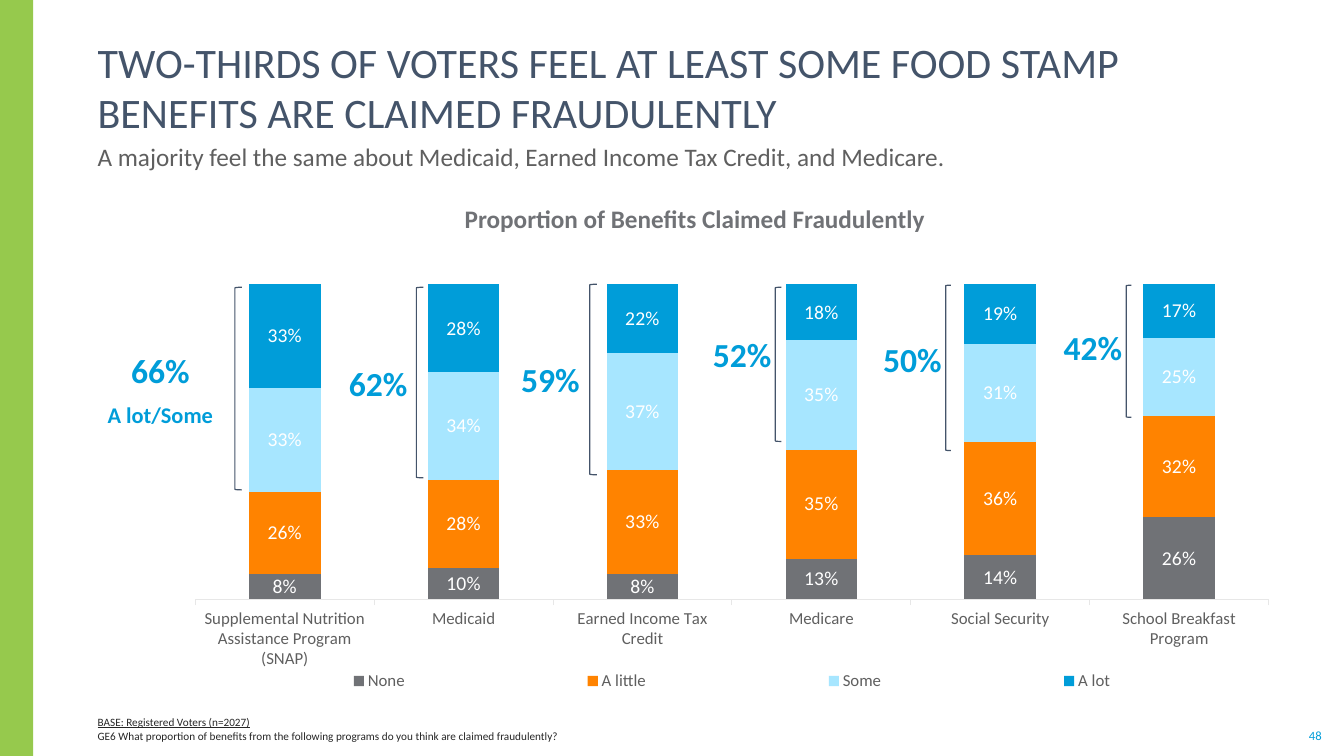
from pptx import Presentation
from pptx.chart.data import CategoryChartData
from pptx.dml.color import RGBColor
from pptx.enum import chart as ch, shapes, text
from pptx.oxml import parse_xml
from pptx.oxml.ns import nsdecls
from pptx.util import Inches, Pt

# Content
BLUE, NAVY, GRAY, SLATE = "009DD9", "44546A", "5F5F5F", "707276"
TITLE = ("TWO-THIRDS OF VOTERS FEEL AT LEAST SOME FOOD STAMP "
         "BENEFITS ARE CLAIMED FRAUDULENTLY")
LEAD = "A majority feel the same about Medicaid, Earned Income Tax Credit, and Medicare."
HEAD = "Proportion of Benefits Claimed Fraudulently"
BASE = "BASE: Registered Voters (n=2027)"
ASK = ("GE6 What proportion of benefits from the following programs "
       "do you think are claimed fraudulently?")
CATS = ["Supplemental Nutrition Assistance Program (SNAP)", "Medicaid",
        "Earned Income Tax Credit", "Medicare", "Social Security",
        "School Breakfast Program"]
SERIES = [
    ("None", SLATE, (0.08, 0.10, 0.08, 0.13, 0.14, 0.26)),
    ("A little", "FF8300", (0.26, 0.28, 0.33, 0.35, 0.36, 0.32)),
    ("Some", "A7E6FF", (0.33, 0.34, 0.37, 0.35, 0.31, 0.25)),
    ("A lot", BLUE, (0.33, 0.28, 0.22, 0.18, 0.19, 0.17)),
]
# Bracket left, top, width, height; label, its centre x and y
SUMS = [
    (2.33, 2.85, 0.07, 2.01, "66%", 1.59, 3.86),
    (4.13, 2.85, 0.07, 1.89, "62%", 3.75, 3.80),
    (5.85, 2.82, 0.07, 1.89, "59%", 5.46, 3.76),
    (7.69, 2.85, 0.06, 1.53, "52%", 7.36, 3.51),
    (9.38, 2.83, 0.05, 1.64, "50%", 9.05, 3.56),
    (11.17, 2.83, 0.05, 1.31, "42%", 10.84, 3.44),
]

deck = Presentation()
deck.slide_width, deck.slide_height = Inches(13.33), Inches(7.5)
slide = deck.slides.add_slide(deck.slide_layouts[6])


def rgb(code):
    return RGBColor.from_string(code)


def style(font, size, color, **more):
    for key, val in dict(name="Calibri", size=Pt(size), **more).items():
        setattr(font, key, val)
    font.color.rgb = rgb(color)


def write(at, rows, side=0.1, mid="TOP", align="LEFT", wrap=True, gap=0):
    """Each row is text, size, colour and a dict of font values."""
    frame = slide.shapes.add_textbox(*map(Inches, at)).text_frame
    form = dict(word_wrap=wrap, margin_left=Inches(side), margin_right=Inches(side),
                margin_top=0, margin_bottom=0,
                vertical_anchor=getattr(text.MSO_ANCHOR, mid))
    for key, val in form.items():
        setattr(frame, key, val)
    for i, (words, size, color, more) in enumerate(rows):
        para = frame.add_paragraph() if i else frame.paragraphs[0]
        para.alignment = getattr(text.PP_ALIGN, align)
        if i:
            para.space_before = Pt(gap)
        run = para.add_run()
        run.text = words
        style(run.font, size, color, **more)


def shape(kind, at):
    item = slide.shapes.add_shape(kind, *map(Inches, at))
    item.shadow.inherit = False
    return item


def place(node, x, y, w, h, inner=False):
    """Set a fixed layout, in fractions of the chart."""
    target = '<c:layoutTarget val="inner"/>' if inner else ""
    parts = "".join(f'<c:{k}Mode val="edge"/>' for k in "xy")
    parts += "".join(f'<c:{k} val="{v}"/>' for k, v in zip("xywh", (x, y, w, h)))
    for old in node.findall("{*}layout"):
        node.remove(old)
    new = parse_xml(f'<c:layout {nsdecls("c")}><c:manualLayout>{target}{parts}'
                    '</c:manualLayout></c:layout>')
    pos = node.find("{*}legendPos")
    if pos is None:
        node.insert(0, new)
    else:
        pos.addnext(new)


# Side bar
bar = shape(shapes.MSO_SHAPE.RECTANGLE, (0, 0, 0.33, 7.5))
bar.fill.solid()
bar.fill.fore_color.rgb = rgb("96C94D")
bar.line.fill.background()

# Chart
data = CategoryChartData(number_format="0%")
data.categories = CATS
for name, _, vals in SERIES:
    data.add_series(name, vals)
box = map(Inches, (1.75, 2.7, 11.02, 4.27))
chart = slide.shapes.add_chart(ch.XL_CHART_TYPE.COLUMN_STACKED_100, *box, data).chart
style(chart.font, 10, GRAY)
chart.has_title = False
chart.has_legend = True
chart.legend.position = ch.XL_LEGEND_POSITION.BOTTOM
chart.legend.include_in_layout = False
style(chart.legend.font, 12, GRAY)
plot = chart.plots[0]
plot.gap_width, plot.overlap, plot.vary_by_categories = 150, 100, False
for series, (_, color, _) in zip(plot.series, SERIES):
    series.format.fill.solid()
    series.format.fill.fore_color.rgb = rgb(color)
    tags = series.data_labels
    form = dict(show_value=True, number_format="0%", number_format_is_linked=False,
                position=ch.XL_LABEL_POSITION.CENTER)
    for key, val in form.items():
        setattr(tags, key, val)
    style(tags.font, 14, "FFFFFF")

# Axes and layout
cat, val = chart.category_axis, chart.value_axis
cat.major_tick_mark = ch.XL_TICK_MARK.OUTSIDE
cat.format.line.color.rgb = rgb("E7E7E7")
cat.format.line.width = Pt(0.75)
style(cat.tick_labels.font, 12, GRAY)
val.visible = val.has_major_gridlines = False
val.minimum_scale, val.maximum_scale = 0, 1
place(plot._element.getparent(), 0.017, 0.028, 0.966, 0.732, True)
place(chart.legend._element, 0, 0.91, 1, 0.08)

# Headings, footnote and page number
write((0.87, 0.34, 11.91, 1.02), [(TITLE, 30, NAVY, {})], mid="BOTTOM")
write((0.87, 1.4, 11.9, 0.34), [(LEAD, 18, GRAY, {})])
write((4.51, 1.97, 4.81, 0.4), [(HEAD, 18, SLATE, {"bold": True})],
      mid="MIDDLE", wrap=False)
write((0.87, 6.97, 11.91, 0.4), [(BASE, 8, "262626", {"underline": True}),
                                 (ASK, 8, "262626", {})], mid="BOTTOM", gap=0.6)
write((12.97, 7.22, 0.15, 0.15), [("48", 9, BLUE, {})],
      side=0, mid="MIDDLE", align="CENTER", wrap=False)

# Brackets and sums
for i, (x, y, w, h, label, cx, cy) in enumerate(SUMS):
    mark = shape(shapes.MSO_SHAPE.LEFT_BRACKET, (x, y, w, h))
    mark.fill.background()
    mark.line.color.rgb = rgb(NAVY)
    mark.line.width = Pt(0.85)
    rows = [(label, 24, BLUE, {"bold": True})]
    wide, high = 0.8, 0.42
    if i == 0:
        rows.append(("A lot/Some", 16, BLUE, {"bold": True}))
        wide, high = 1.47, 0.8
    write((cx - wide / 2, cy - high / 2, wide, high), rows,
          side=0, mid="MIDDLE", align="CENTER", gap=8)

deck.save("out.pptx")
